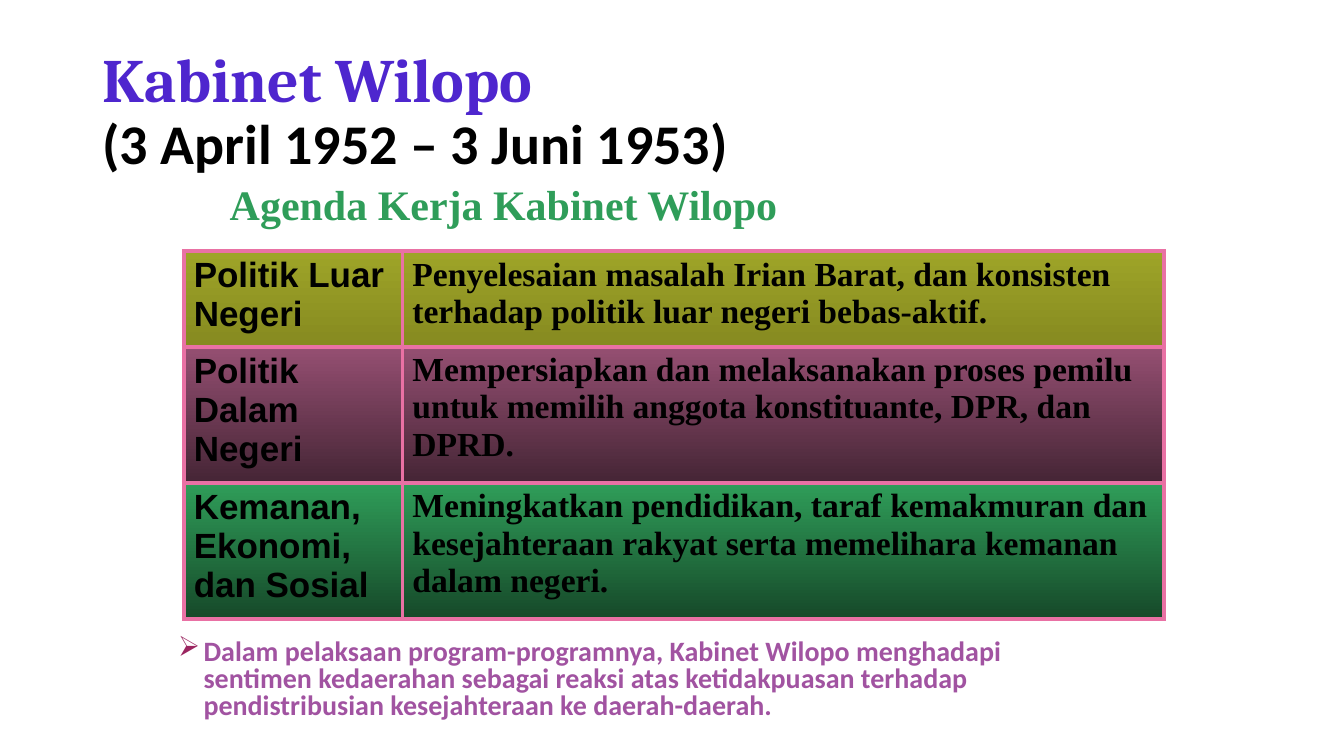
import pptx
import pptx.util
import pptx.dml.color
import pptx.enum.text
import pptx.oxml.ns
from lxml import etree

Cm, Pt = pptx.util.Cm, pptx.util.Pt
qn = pptx.oxml.ns.qn

# Content
cabinet = "Kabinet Wilopo"
term = "(3 April 1952 – 3 Juni 1953)"
agenda_heading = "Agenda Kerja Kabinet Wilopo"
agenda = [
    ("Politik Luar Negeri",
     "Penyelesaian masalah Irian Barat, dan konsisten terhadap politik luar negeri bebas-aktif."),
    ("Politik Dalam Negeri",
     "Mempersiapkan dan melaksanakan proses pemilu untuk memilih anggota konstituante, DPR, dan DPRD."),
    ("Kemanan, Ekonomi, dan Sosial",
     "Meningkatkan pendidikan, taraf kemakmuran dan kesejahteraan rakyat serta memelihara kemanan dalam negeri."),
]
challenge = ("Dalam pelaksaan program-programnya, Kabinet Wilopo menghadapi sentimen kedaerahan "
             "sebagai reaksi atas ketidakpuasan terhadap pendistribusian kesejahteraan ke daerah-daerah.")

# Format
colours = {"violet": "4E26CE", "black": "000000", "green": "2F9D59", "purple": "A153A1",
           "bullet": "9B2560", "border": "E971A4", "olive": "9EA428", "dark olive": "868A20",
           "plum": "954F72", "dark plum": "452535", "dark green": "164929"}
row_gradients = [("olive", "dark olive"), ("plum", "dark plum"), ("green", "dark green")]
formats = {
    "cabinet": {"name": "Cambria", "size": Pt(44), "bold": True},
    "term": {"name": "Calibri", "size": Pt(40), "bold": True},
    "heading": {"name": "Times New Roman", "size": Pt(30), "bold": True},
    "field": {"name": "Arial", "size": Pt(25), "bold": True},
    "plan": {"name": "Times New Roman", "size": Pt(24), "bold": True},
    "challenge": {"name": "Calibri", "size": Pt(20), "bold": True},
}
column_widths = [Cm(5.51), Cm(19.2)]
row_heights = [Cm(2.41), Cm(3.43), Cm(3.43)]


def rgb(colour):
    return pptx.dml.color.RGBColor.from_string(colours[colour])


def add_run(paragraph, text, style, colour):
    run = paragraph.add_run()
    run.text = text
    for key, value in formats[style].items():
        setattr(run.font, key, value)
    run.font.color.rgb = rgb(colour)


def add_text_box(left, top, width, height, line_spacing):
    frame = slide.shapes.add_textbox(Cm(left), Cm(top), Cm(width), Cm(height)).text_frame
    frame.word_wrap = True
    frame.paragraphs[0].line_spacing = line_spacing
    return frame


def add_borders(cell):
    properties = cell._tc.get_or_add_tcPr()
    for side in ("a:lnL", "a:lnR", "a:lnT", "a:lnB"):
        line = etree.SubElement(properties, qn(side), w=str(Pt(3)))
        fill = etree.SubElement(line, qn("a:solidFill"))
        etree.SubElement(fill, qn("a:srgbClr"), val=colours["border"])


presentation = pptx.Presentation()
presentation.slide_width, presentation.slide_height = Cm(33.87), Cm(19.05)
slide = presentation.slides.add_slide(presentation.slide_layouts[6])

# Title
title = add_text_box(2.33, 1.01, 29.21, 3.68, 0.9)
title.vertical_anchor = pptx.enum.text.MSO_ANCHOR.MIDDLE
add_run(title.paragraphs[0], cabinet, "cabinet", "violet")
title.paragraphs[0].add_line_break()
add_run(title.paragraphs[0], term, "term", "black")

# Agenda table
table = slide.shapes.add_table(len(agenda), 2, Cm(4.63), Cm(6.33),
                               sum(column_widths), sum(row_heights)).table
table.first_row = table.horz_banding = False
for column, width in zip(table.columns, column_widths):
    column.width = width
for row, height, texts, gradient in zip(table.rows, row_heights, agenda, row_gradients):
    row.height = height
    for cell, text, style in zip(row.cells, texts, ("field", "plan")):
        add_run(cell.text_frame.paragraphs[0], text, style, "black")
        add_borders(cell)
        cell.fill.gradient()
        cell.fill.gradient_angle = 270
        for stop, colour in zip(cell.fill.gradient_stops, gradient):
            stop.color.rgb = rgb(colour)

# Agenda heading
heading = add_text_box(5.54, 4.52, 14.6, 1.47, 0.9)
add_run(heading.paragraphs[0], agenda_heading, "heading", "green")

# Bulleted challenge
challenge_line = add_text_box(4.24, 16, 22, 2.31, 0.8).paragraphs[0]
bullet = challenge_line._p.get_or_add_pPr()
bullet.set("marL", str(Cm(0.64)))
bullet.set("indent", str(-Cm(0.64)))
bullet_colour = etree.SubElement(bullet, qn("a:buClr"))
etree.SubElement(bullet_colour, qn("a:srgbClr"), val=colours["bullet"])
etree.SubElement(bullet, qn("a:buChar"), char="➢")
add_run(challenge_line, challenge, "challenge", "purple")

presentation.save("out.pptx")
